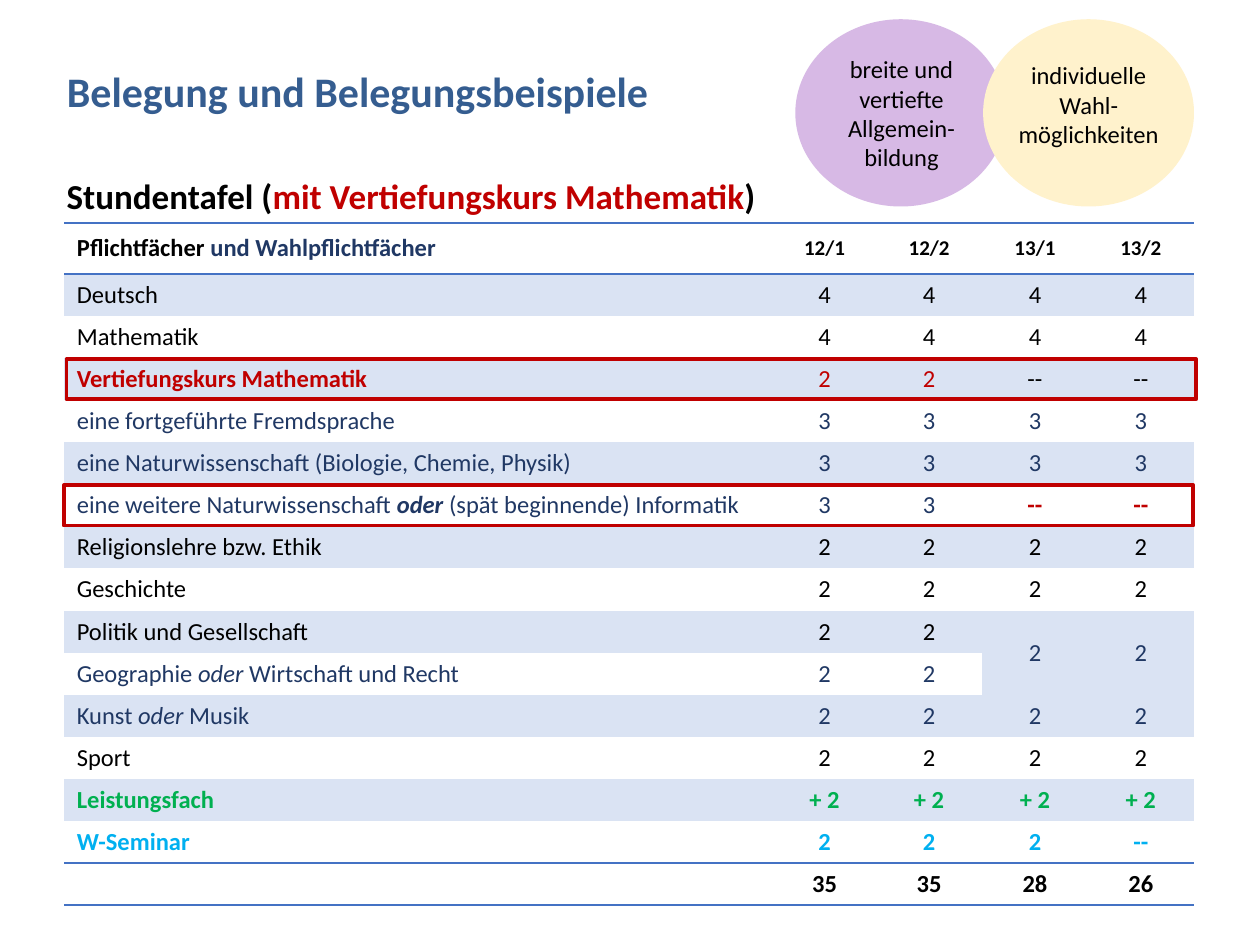
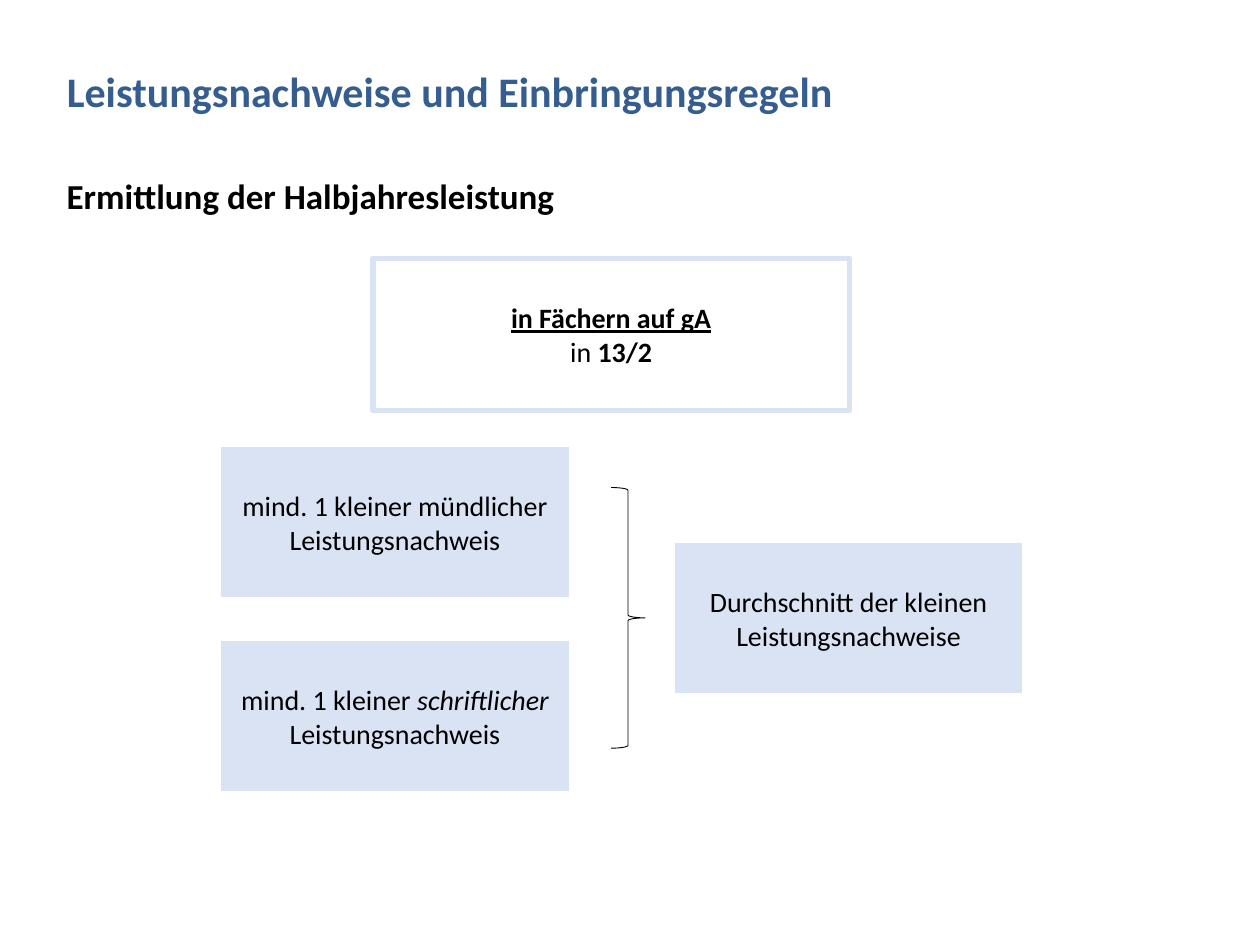
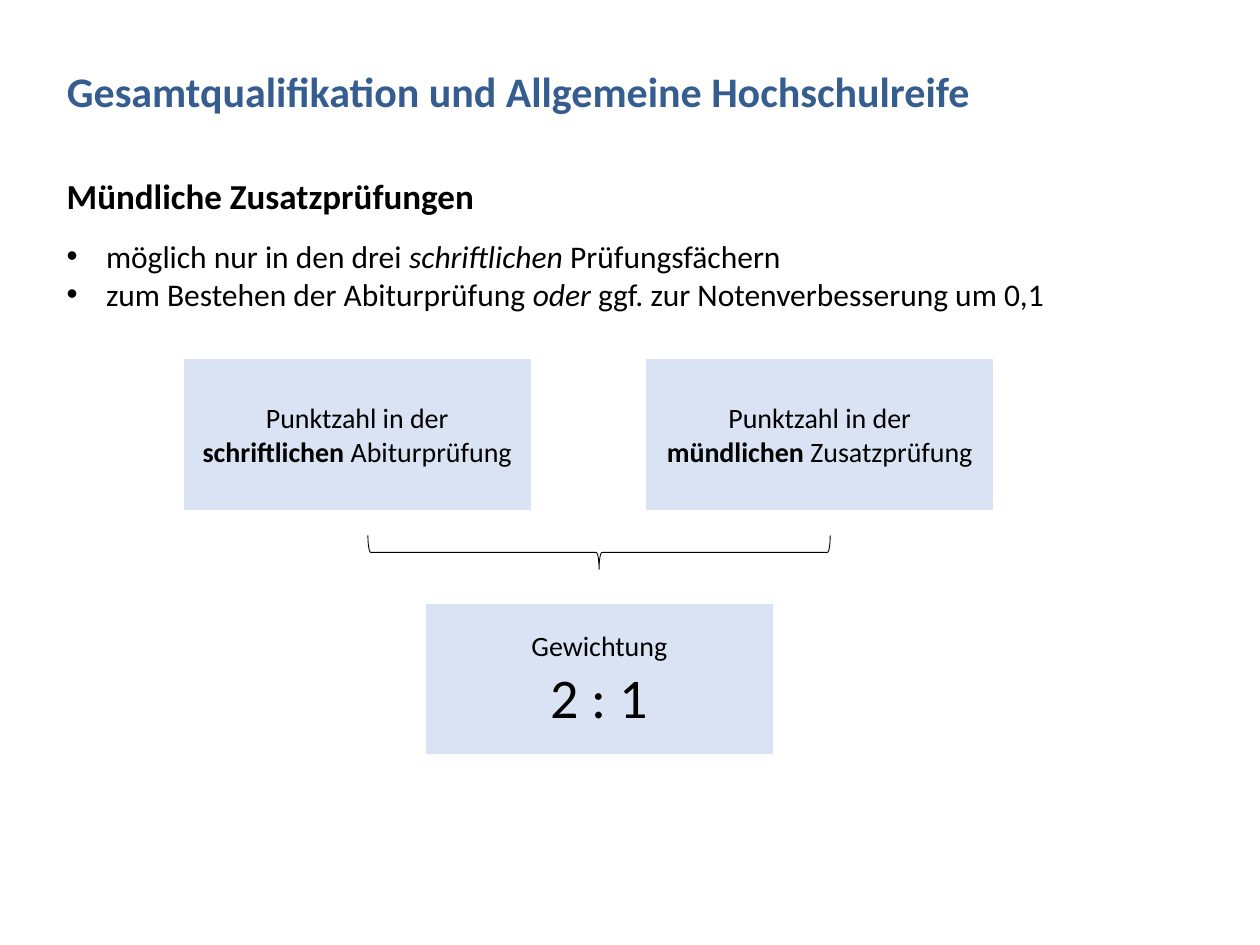
from lxml import etree
from pptx import Presentation
from pptx.dml.color import RGBColor
from pptx.enum import shapes, text
from pptx.oxml import ns
from pptx.util import Pt

# Shared look
FONT = "Calibri"
BLACK, WHITE, TITLE_BLUE, NAVY = "000000", "FFFFFF", "355D90", "203864"
RED, GREEN, CYAN = "C00000", "00B050", "00B0F0"
PALE_BLUE, RULE_BLUE, PURPLE, CREAM = "DAE3F3", "4472C4", "D7B9E5", "FFF2CC"
PLAIN_TABLE = "{2D5ABB26-0587-4C30-8999-92F81FD0307C}"
LEFT, CENTER = text.PP_ALIGN.LEFT, text.PP_ALIGN.CENTER
TOP, MIDDLE = text.MSO_ANCHOR.TOP, text.MSO_ANCHOR.MIDDLE
BOX_SIZE = (199.5, 87)

# Content: a paragraph is a list of runs, a run is text or (text, styles);
# styles are "b", "i", "u" or "#" followed by a colour
HEADINGS = [
    ("Belegung und Belegungsbeispiele",
     ["Stundentafel (", ("mit Vertiefungskurs Mathematik", "#" + RED), ")"]),
    ("Leistungsnachweise und Einbringungsregeln", ["Ermittlung der Halbjahresleistung"]),
    ("Gesamtqualifikation und Allgemeine Hochschulreife", ["Mündliche Zusatzprüfungen"]),
]

HEADER = (["Pflichtfächer ", ("und Wahlpflichtfächer", "#" + NAVY)],
          ["12/1", "12/2", "13/1", "13/2"])
SUBJECTS = [  # label runs, hours per term, colour, bold
    (["Deutsch"], ["4"] * 4, BLACK, False),
    (["Mathematik"], ["4"] * 4, BLACK, False),
    ([("Vertiefungskurs Mathematik", "b")],
     ["2", "2", ("--", "#" + BLACK), ("--", "#" + BLACK)], RED, False),
    (["eine fortgeführte Fremdsprache"], ["3"] * 4, NAVY, False),
    (["eine Naturwissenschaft (Biologie, Chemie, Physik)"], ["3"] * 4, NAVY, False),
    (["eine weitere Naturwissenschaft ", ("oder ", "b i"), "(spät beginnende) Informatik"],
     ["3", "3", ("--", "b #" + RED), ("--", "b #" + RED)], NAVY, False),
    (["Religionslehre bzw. Ethik"], ["2"] * 4, BLACK, False),
    (["Geschichte"], ["2"] * 4, BLACK, False),
    (["Politik und Gesellschaft"],
     ["2", "2", ("2", "#" + NAVY), ("2", "#" + NAVY)], BLACK, False),
    (["Geographie ", ("oder ", "i"), "Wirtschaft und Recht"],
     ["2", "2", None, None], NAVY, False),
    (["Kunst ", ("oder", "i"), " Musik"], ["2"] * 4, NAVY, False),
    (["Sport"], ["2"] * 4, BLACK, False),
    (["Leistungsfach"], ["+ 2"] * 4, GREEN, True),
    (["W-Seminar"], ["2", "2", "2", "--"], CYAN, True),
    ([], ["35", "35", "28", "26"], BLACK, True),
]
TABLE_LEFT, TABLE_TOP = 36.7, 127.4
COLUMN_WIDTHS = [405, 59, 60.5, 60.5, 60.5]
HEADER_HEIGHT, ROW_HEIGHT = 29.2, 24.04
HIGHLIGHTS = [(3, 38), (6, 36.5)]  # table row, left edge

CIRCLES = [  # left, colour, text box, paragraphs
    (455, PURPLE, (468, 27.4, 94.3, 75), [["breite und vertiefte Allgemein-bildung"]]),
    (562.3, CREAM, (571, 31, 102.2, 58), [["individuelle"], ["Wahl-"], ["möglichkeiten"]]),
]

GRADE_BOXES = [  # left, top, paragraphs
    (126, 365.8, [["mind. 1 kleiner ", ("schriftlicher", "i"), " Leistungsnachweis"]]),
    (126, 254.9, [["mind. 1 kleiner mündlicher Leistungsnachweis"]]),
    (385.2, 309.8, [["Durchschnitt der kleinen Leistungsnachweise"]]),
]
LEVEL = [[("in Fächern auf gA", "b u")], ["in ", ("13/2", "b")]]

EXAM_POINTS = [
    ["möglich nur in den drei ", ("schriftlichen ", "i"), "Prüfungsfächern"],
    ["zum Bestehen der Abiturprüfung ", ("oder", "i"), " ggf. zur Notenverbesserung um 0,1"],
]
EXAM_BOXES = [
    (104.4, 204.7, [["Punktzahl in der ", ("schriftlichen ", "b"), "Abiturprüfung"]]),
    (368.7, 204.7, [["Punktzahl in der ", ("mündlichen ", "b"), "Zusatzprüfung"]]),
    (242.8, 344.4, [["Gewichtung"], ["2 : 1"]]),
]


def rgb(value):
    return RGBColor.from_string(value)


def points(*lengths):
    return [Pt(length) for length in lengths]


def write(frame, paragraphs, size, color=BLACK, bold=False, align=LEFT):
    """Fill a text frame with paragraphs of styled runs."""
    for index, runs in enumerate(paragraphs):
        paragraph = frame.add_paragraph() if index else frame.paragraphs[0]
        paragraph.alignment = align
        for item in runs:
            content, styles = (item, "") if isinstance(item, str) else item
            styles = styles.split()
            run = paragraph.add_run()
            run.text = content
            font = run.font
            font.name, font.size = FONT, Pt(size)
            font.bold = bold or "b" in styles
            font.italic, font.underline = "i" in styles, "u" in styles
            own = [style[1:] for style in styles if style.startswith("#")]
            font.color.rgb = rgb(own[0] if own else color)


def add_text(slide, place, paragraphs, size, **look):
    frame = slide.shapes.add_textbox(*points(*place)).text_frame
    frame.word_wrap = True
    write(frame, paragraphs, size, **look)
    return frame


def add_shape(slide, kind, place, fill, line, width):
    shape = slide.shapes.add_shape(kind, *points(*place))
    shape.shadow.inherit = False
    if fill:
        shape.fill.solid()
        shape.fill.fore_color.rgb = rgb(fill)
    else:
        shape.fill.background()
    shape.line.color.rgb = rgb(line)
    shape.line.width = Pt(width)
    return shape


def add_box(slide, place, paragraphs, fill=PALE_BLUE, line=WHITE, width=1):
    shape = add_shape(slide, shapes.MSO_SHAPE.RECTANGLE, place, fill, line, width)
    shape.text_frame.vertical_anchor = MIDDLE
    write(shape.text_frame, paragraphs, 16, align=CENTER)
    return shape


def add_boxes(slide, boxes):
    return [add_box(slide, (left, top, *BOX_SIZE), paragraphs)
            for left, top, paragraphs in boxes]


def add_brace(slide, place):
    return add_shape(slide, shapes.MSO_SHAPE.RIGHT_BRACE, place, None, BLACK, 0.5)


def add_slide(presentation, title, subtitle):
    slide = presentation.slides.add_slide(presentation.slide_layouts[5])
    placeholder = slide.shapes.title
    placeholder.left, placeholder.top, placeholder.width, placeholder.height = points(
        31, 34, 675, 62.5)
    frame = placeholder.text_frame
    frame.auto_size = text.MSO_AUTO_SIZE.NONE
    frame.vertical_anchor = TOP
    write(frame, [[title]], 24, TITLE_BLUE, bold=True)
    add_text(slide, (31, 96, 652, 31.5), [subtitle], 20, bold=True)
    return slide


def add_rules(cell):
    """Draw the top and bottom border of a table cell."""
    properties = cell._tc.get_or_add_tcPr()
    for index, side in enumerate(("lnT", "lnB")):
        line = etree.Element(ns.qn("a:" + side), w=str(Pt(1)))
        fill = etree.SubElement(line, ns.qn("a:solidFill"))
        etree.SubElement(fill, ns.qn("a:srgbClr"), val=RULE_BLUE)
        properties.insert(index, line)


def add_bullet(paragraph, indent):
    properties = paragraph._p.get_or_add_pPr()
    properties.set("marL", str(Pt(indent)))
    properties.set("indent", str(-Pt(indent)))
    etree.SubElement(properties, ns.qn("a:buFont"), typeface="Arial")
    etree.SubElement(properties, ns.qn("a:buChar"), char="•")


def add_timetable(slide):
    rows = [(*HEADER, BLACK, True)] + SUBJECTS
    last = len(rows) - 1
    table = slide.shapes.add_table(
        len(rows), len(COLUMN_WIDTHS), *points(
            TABLE_LEFT, TABLE_TOP, sum(COLUMN_WIDTHS),
            HEADER_HEIGHT + last * ROW_HEIGHT)).table
    table.first_row = table.horz_banding = False
    table._tbl.tblPr.find(ns.qn("a:tableStyleId")).text = PLAIN_TABLE
    for column, width in zip(table.columns, COLUMN_WIDTHS):
        column.width = Pt(width)

    for row, (label, hours, color, bold) in enumerate(rows):
        table.rows[row].height = Pt(ROW_HEIGHT if row else HEADER_HEIGHT)
        for column, runs in enumerate([label] + [[hour] for hour in hours]):
            cell = table.cell(row, column)
            cell.margin_top = cell.margin_bottom = 0
            cell.vertical_anchor = MIDDLE
            if row % 2 and row < last:
                cell.fill.solid()
                cell.fill.fore_color.rgb = rgb(PALE_BLUE)
            else:
                cell.fill.background()
            if row in (0, last):
                add_rules(cell)
            if runs == [None]:  # continues the cell above
                table.cell(row - 1, column).merge(cell)
                continue
            write(cell.text_frame, [runs], 12 if row == 0 and column else 14,
                  color, bold, CENTER if column else LEFT)


def build_timetable_slide(presentation):
    slide = add_slide(presentation, *HEADINGS[0])
    add_timetable(slide)
    for left, color, label_place, paragraphs in CIRCLES:
        add_shape(slide, shapes.MSO_SHAPE.OVAL, (left, 11.5, 119.5, 106), color, color, 1)
        add_text(slide, label_place, paragraphs, 14, align=CENTER)
    for row, left in HIGHLIGHTS:
        top = TABLE_TOP + HEADER_HEIGHT + (row - 1) * ROW_HEIGHT + 0.5
        add_shape(slide, shapes.MSO_SHAPE.RECTANGLE,
                  (left, top, sum(COLUMN_WIDTHS), 23), None, RED, 2.25)


def build_grades_slide(presentation):
    slide = add_slide(presentation, *HEADINGS[1])
    add_boxes(slide, GRADE_BOXES)
    add_box(slide, (213.1, 147.6, 272.2, 87), LEVEL, WHITE, PALE_BLUE, 3)
    add_brace(slide, (349.2, 278.6, 19.4, 149))


def build_exam_slide(presentation):
    slide = add_slide(presentation, *HEADINGS[2])
    frame = add_text(slide, (31, 131.8, 637, 51), EXAM_POINTS, 18)
    for paragraph in frame.paragraphs:
        add_bullet(paragraph, 22.5)
    weighting = add_boxes(slide, EXAM_BOXES)[-1]
    weighting.text_frame.paragraphs[1].runs[0].font.size = Pt(32)
    add_brace(slide, (332.6, 183.6, 19.4, 264.2)).rotation = 90


def main():
    presentation = Presentation()
    presentation.slide_width, presentation.slide_height = points(720, 540)
    build_timetable_slide(presentation)
    build_grades_slide(presentation)
    build_exam_slide(presentation)
    presentation.save("out.pptx")


if __name__ == "__main__":
    main()
